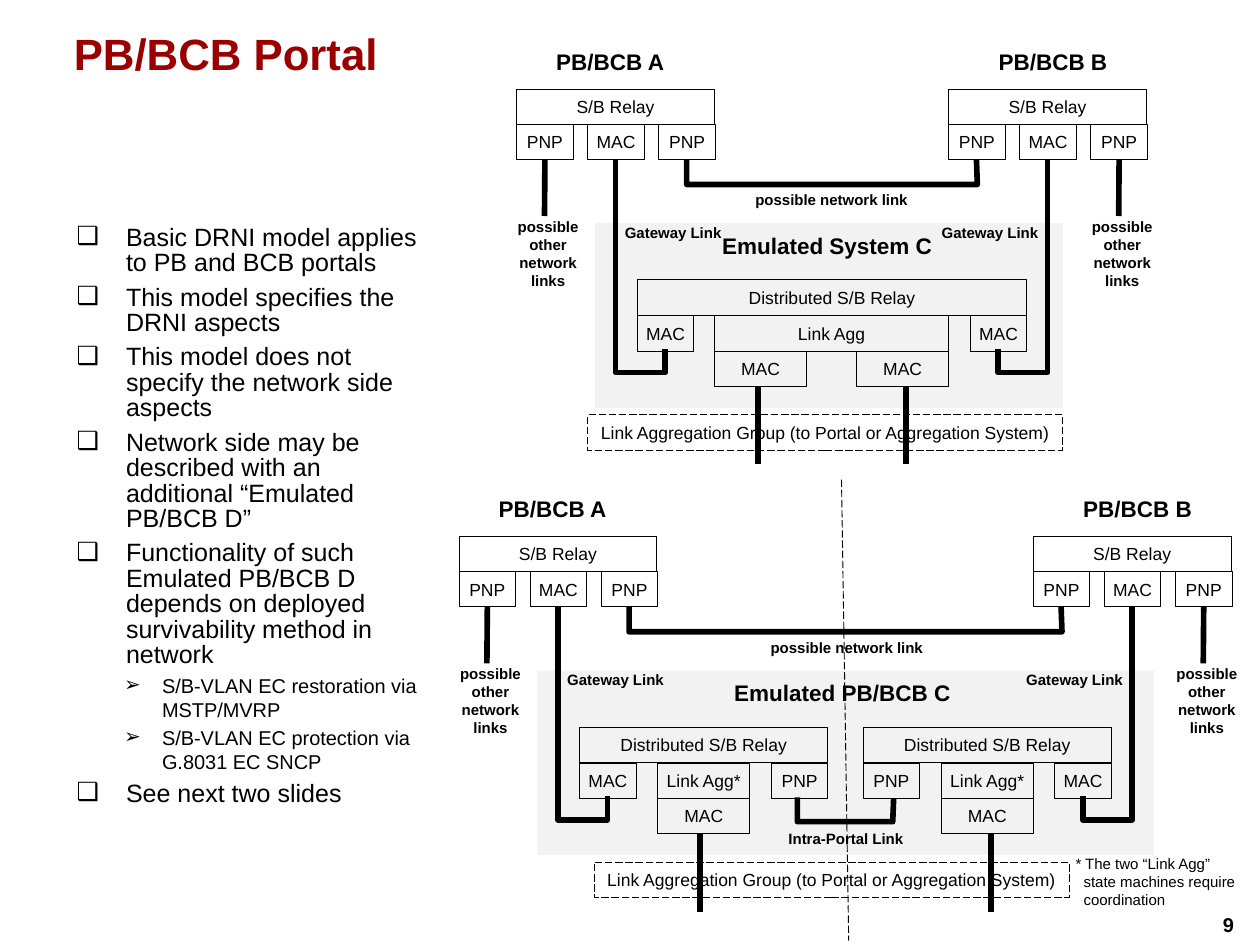
from lxml import etree
from pptx import Presentation
from pptx.dml.color import RGBColor
from pptx.enum import dml, shapes, text
from pptx.oxml import ns
from pptx.util import Inches, Pt

BLACK = RGBColor(0, 0, 0)
RED = RGBColor(0x99, 0, 0)
GREY = RGBColor(0xF2, 0xF2, 0xF2)
FONT = "Arial"
ROW = 0.39
PORT = 0.63
PORT_STEP = 0.79
BRIDGE = 2.2
LINK_AGG = 1.02
POINTS = [
    (1, "Basic DRNI model applies to PB and BCB portals"),
    (1, "This model specifies the DRNI aspects"),
    (1, "This model does not specify the network side aspects"),
    (1, "Network side may be described with an additional “Emulated PB/BCB D”"),
    (1, "Functionality of such Emulated PB/BCB D depends on deployed "
        "survivability method in network"),
    (2, "S/B-VLAN EC restoration via MSTP/MVRP"),
    (2, "S/B-VLAN EC protection via G.8031 EC SNCP"),
    (1, "See next two slides"),
]


def write(para, words, size=14, bold=False, color=BLACK, align=None):
    """Fill a paragraph with one formatted span."""
    span = para.add_run()
    span.text = words
    span.font.name, span.font.size = FONT, Pt(size)
    span.font.bold, span.font.color.rgb = bold, color
    para.alignment = align


def set_frame(frame, wrap=True, anchor=text.MSO_ANCHOR.MIDDLE, inset=(0, 0)):
    """Set wrapping, anchor and insets of a text frame."""
    frame.auto_size = text.MSO_AUTO_SIZE.NONE
    frame.word_wrap, frame.vertical_anchor = wrap, anchor
    frame.margin_left = frame.margin_right = Inches(inset[0])
    frame.margin_top = frame.margin_bottom = Inches(inset[1])


def set_indent(para, left, hanging, bullet=None):
    """Give a paragraph a hanging indent and an optional bullet."""
    props = para._p.get_or_add_pPr()
    props.set("marL", str(Inches(left)))
    props.set("indent", str(-Inches(hanging)))
    if bullet:
        etree.SubElement(props, ns.qn("a:buFont")).set("typeface", FONT)
        etree.SubElement(props, ns.qn("a:buChar")).set("char", bullet)


def add_box(page, left, top, width, words, dashed=False):
    """Draw an outlined rectangle with centred text."""
    box = page.shapes.add_shape(shapes.MSO_SHAPE.RECTANGLE, Inches(left),
                                Inches(top), Inches(width), Inches(ROW))
    box.shadow.inherit = False
    box.fill.background()
    box.line.color.rgb, box.line.width = BLACK, Pt(0.75)
    if dashed:
        box.line.dash_style = dml.MSO_LINE.LONG_DASH
    set_frame(box.text_frame, wrap=False)
    write(box.text_frame.paragraphs[0], words, align=text.PP_ALIGN.CENTER)
    return box


def add_label(page, center, top, words, width=1.2, height=0.2, size=12, wrap=False):
    """Place a bold label centred on a horizontal position."""
    label = page.shapes.add_textbox(Inches(center - width / 2), Inches(top),
                                    Inches(width), Inches(height))
    set_frame(label.text_frame, wrap=wrap)
    write(label.text_frame.paragraphs[0], words, size=size, bold=True,
          align=text.PP_ALIGN.CENTER)


def add_line(page, start, end, weight=4.5, dashed=False):
    """Draw a straight black connector."""
    line = page.shapes.add_connector(shapes.MSO_CONNECTOR.STRAIGHT,
                                     *map(Inches, start + end))
    line.line.color.rgb, line.line.width = BLACK, Pt(weight)
    if dashed:
        line.line.dash_style = dml.MSO_LINE.LONG_DASH
    etree.SubElement(line._element.spPr, ns.qn("a:effectLst"))
    return line


def add_bent_link(page, *points):
    """Draw a thick open link through the given points."""
    first, *rest = [tuple(map(Inches, point)) for point in points]
    builder = page.shapes.build_freeform(*first, scale=1.0)
    builder.add_line_segments(rest, close=False)
    link = builder.convert_to_shape()
    link.shadow.inherit = False
    link.fill.background()
    link.line.color.rgb, link.line.width = BLACK, Pt(4.5)


def add_bridge(page, left, top, name, side):
    """Draw a bridge; side is 1 when the portal lies to its right, else -1."""
    middle = left + BRIDGE / 2
    add_label(page, middle - 0.06 * side, top - 0.46, name, height=0.3, size=18)
    add_box(page, left, top, BRIDGE, "S/B Relay")
    ports = [add_box(page, left + i * PORT_STEP, top + ROW, PORT, words)
             for i, words in enumerate(("PNP", "MAC", "PNP"))]
    bottom = top + 2 * ROW
    outer = middle - side * PORT_STEP
    stub = add_line(page, (outer, bottom), (outer, bottom + 0.63))
    stub.begin_connect(ports[1 - side], 2)
    add_label(page, outer + 0.04, top + 1.42, "possible other network links",
              width=1.03, height=0.81, wrap=True)
    add_label(page, middle + side * 0.64, top + 1.49, "Gateway Link")
    inner = middle + side * 0.55
    add_bent_link(page, (middle, bottom), (middle, top + 3.15),
                  (inner, top + 3.15), (inner, top + 2.89))


def add_portal(page, left_a, left_b, top, shade_width, center, system, group_left):
    """Draw the parts that both portal diagrams share."""
    shade = page.shapes.add_shape(
        shapes.MSO_SHAPE.RECTANGLE, Inches(left_a + 0.87), Inches(top + 1.49),
        Inches(shade_width), Inches(2.05))
    shade.shadow.inherit = False
    shade.fill.solid()
    shade.fill.fore_color.rgb = GREY
    shade.line.fill.background()
    add_bridge(page, left_a, top, "PB/BCB A", 1)
    add_bridge(page, left_b, top, "PB/BCB B", -1)
    start, end, bottom = left_a + 1.89, left_b + 0.32, top + 2 * ROW
    add_bent_link(page, (start, bottom), (start, bottom + 0.28),
                  (end, bottom + 0.28), (end - 0.01, bottom))
    add_label(page, center + 0.05, top + 1.13, "possible network link", width=1.7)
    add_label(page, center, top + 1.59, system, width=2.4, height=0.3, size=18)
    add_box(page, group_left, top + 3.62, 5.28,
            "Link Aggregation Group (to Portal or Aggregation System)", dashed=True)


def add_emulated_relay(page, left, top, width, parts):
    """Draw a distributed relay and the (offset, row, width, words) parts below."""
    add_box(page, left, top, width, "Distributed S/B Relay")
    for offset, row, part_width, words in parts:
        add_box(page, left + offset, top + row * ROW + 0.01, part_width, words)


def add_points(page):
    """Write the bulleted list."""
    body = page.shapes.add_textbox(Inches(0.7), Inches(2.45), Inches(4.25), Inches(6.93))
    frame = body.text_frame
    set_frame(frame, anchor=text.MSO_ANCHOR.TOP, inset=(0.12, 0.06))
    for i, (level, words) in enumerate(POINTS):
        para = frame.add_paragraph() if i else frame.paragraphs[0]
        if level == 1:
            write(para, words, size=20)
            para.line_spacing, para.space_before = 0.85, Pt(7)
            set_indent(para, 0.58, 0.55, "❑")
        else:
            write(para, words, size=16)
            para.space_before = Pt(3.2)
            set_indent(para, 0.98, 0.42, "➢")


def add_heading(page):
    """Place and format the title."""
    title = page.shapes.title
    title.left, title.top = Inches(0.7), Inches(0.24)
    title.width, title.height = Inches(12.6), Inches(1.32)
    set_frame(title.text_frame, anchor=text.MSO_ANCHOR.TOP, inset=(0.12, 0.06))
    write(title.text_frame.paragraphs[0], "PB/BCB Portal", size=35, bold=True,
          color=RED, align=text.PP_ALIGN.LEFT)


def add_footnote(page):
    """Write the note on the link aggregation machines."""
    note = page.shapes.add_textbox(Inches(11.95), Inches(9.5), Inches(1.89), Inches(0.61))
    set_frame(note.text_frame, anchor=text.MSO_ANCHOR.TOP)
    para = note.text_frame.paragraphs[0]
    write(para, "* The two “Link Agg” state machines require coordination", size=12)
    set_indent(para, 0.09, 0.09)


def main():
    """Build the slide and save it."""
    deck = Presentation()
    deck.slide_width, deck.slide_height = Inches(14), Inches(10.5)
    page = deck.slides.add_slide(deck.slide_layouts[5])
    add_heading(page)
    add_points(page)

    add_portal(page, 5.1, 11.48, 5.96, 6.85, 9.36, "Emulated PB/BCB C", 6.6)
    for left, ends in ((6.44, ("MAC", "PNP")), (9.59, ("PNP", "MAC"))):
        add_emulated_relay(page, left, 8.08, 2.76, [
            (0, 1, PORT, ends[0]), (0.87, 1, LINK_AGG, "Link Agg*"),
            (2.13, 1, PORT, ends[1]), (0.87, 2, LINK_AGG, "MAC")])
    add_bent_link(page, (8.86, 8.86), (8.86, 9.13), (9.92, 9.13), (9.93, 8.87))
    add_label(page, 9.4, 9.22, "Intra-Portal Link", width=1.3)
    add_footnote(page)
    add_line(page, (9.35, 5.33), (9.43, 10.45), weight=0.75, dashed=True)

    add_portal(page, 5.74, 10.54, 0.99, 5.2, 9.19, "Emulated System C", 6.53)
    add_emulated_relay(page, 7.08, 3.11, 4.33, [
        (0, 1, PORT, "MAC"), (0.86, 1, 2.6, "Link Agg"), (3.7, 1, PORT, "MAC"),
        (0.86, 2, LINK_AGG, "MAC"), (2.44, 2, LINK_AGG, "MAC")])

    for x, top, bottom in ((7.78, 9.27, 10.13), (11.01, 9.27, 10.13),
                           (8.42, 4.29, 5.16), (10.07, 4.29, 5.16)):
        add_line(page, (x, top), (x, bottom))
    add_label(page, 13.65, 10.12, "9", width=0.3, height=0.3, size=16)
    deck.save("out.pptx")


if __name__ == "__main__":
    main()
